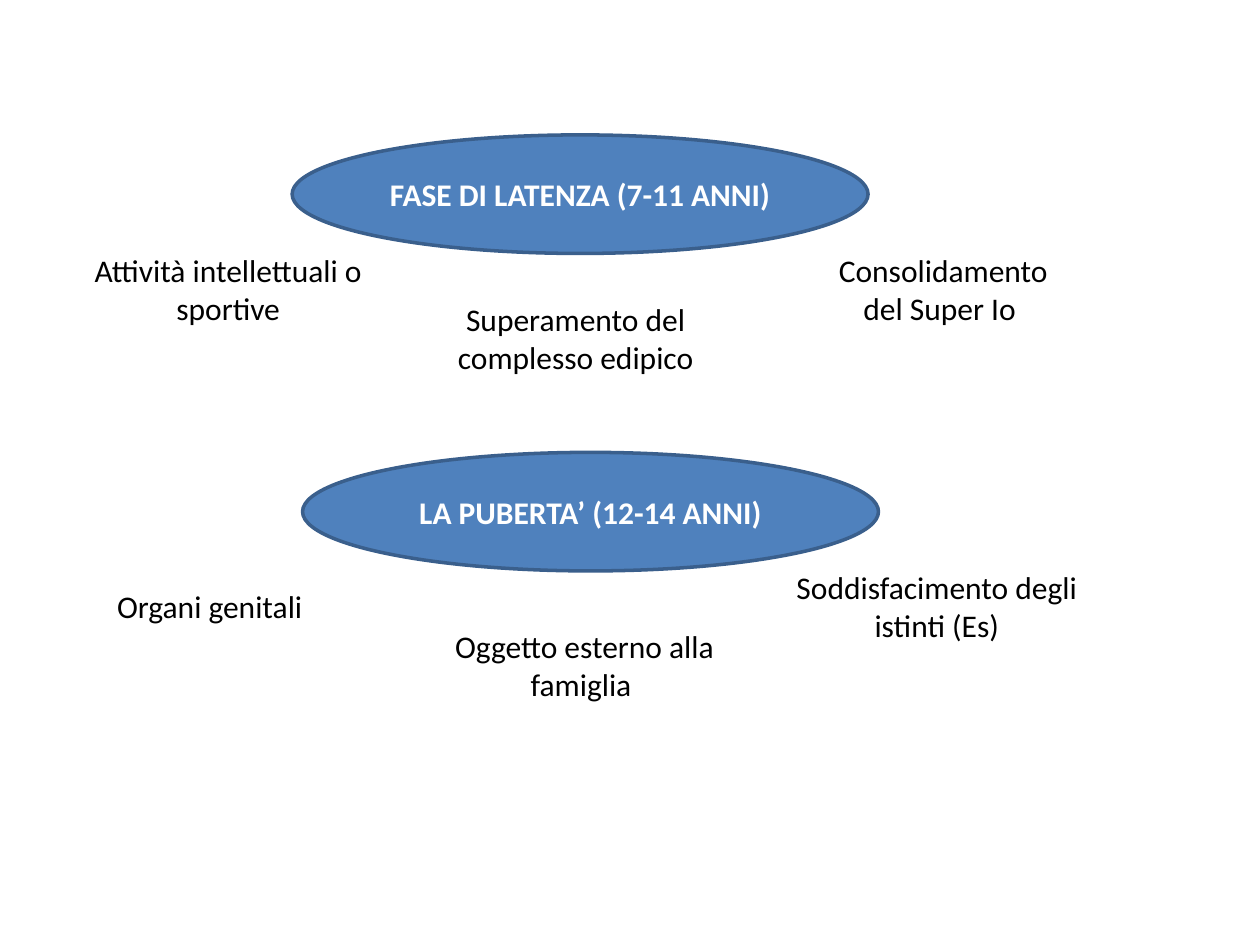
import pptx
import pptx.dml.color
import pptx.enum.shapes
import pptx.enum.text
import pptx.util

Cm = pptx.util.Cm
COLORS = {"fill": "4F81BD", "line": "3A5F8C", "light": "FFFFFF", "dark": "000000"}
ALIGN = pptx.enum.text.PP_ALIGN

# Each phase: title, ellipse position, then its notes (text, left, top, width, height, alignment)
PHASES = [
    ("FASE DI LATENZA (7-11 ANNI)", 5.89, 2.72, [
        ("Attività intellettuali o sportive", 1.5, 4.93, 6.2, 1.8, ALIGN.CENTER),
        ("Superamento del complesso edipico", 8.71, 5.92, 5.79, 1.8, ALIGN.CENTER),
        ("Consolidamento del Super Io ", 16.31, 4.93, 5.41, 1.8, ALIGN.CENTER),
    ]),
    ("LA PUBERTA’ (12-14 ANNI)", 6.1, 9.12, [
        ("Organi genitali", 2.11, 11.71, 4.6, 1.02, ALIGN.LEFT),
        ("Oggetto esterno alla famiglia ", 8.89, 12.52, 5.79, 1.8, ALIGN.CENTER),
        ("Soddisfacimento degli istinti (Es)", 15.29, 11.33, 7.19, 1.8, ALIGN.CENTER),
    ]),
]


def rgb(name):
    return pptx.dml.color.RGBColor.from_string(COLORS[name])


class PhaseSlide:
    font_name = "Calibri"
    font_size = pptx.util.Pt(18)
    ellipse_size = Cm(11.61), Cm(2.39)

    def __init__(self, s):
        self.s = s

    def set_text(self, tf, text, color, align, bold=False):
        tf.word_wrap = True
        tf.text = text
        p = tf.paragraphs[0]
        p.alignment = align
        font = p.runs[0].font
        font.name, font.size, font.bold = self.font_name, self.font_size, bold
        font.color.rgb = rgb(color)

    def ellipse(self, text, left, top):
        sp = self.s.shapes.add_shape(
            pptx.enum.shapes.MSO_SHAPE.OVAL, Cm(left), Cm(top), *self.ellipse_size)
        sp.shadow.inherit = False
        sp.fill.solid()
        sp.fill.fore_color.rgb = rgb("fill")
        sp.line.color.rgb = rgb("line")
        sp.line.width = pptx.util.Pt(2)
        sp.text_frame.vertical_anchor = pptx.enum.text.MSO_ANCHOR.MIDDLE
        self.set_text(sp.text_frame, text, "light", ALIGN.CENTER, bold=True)

    def note(self, text, left, top, width, height, align):
        sp = self.s.shapes.add_textbox(Cm(left), Cm(top), Cm(width), Cm(height))
        self.set_text(sp.text_frame, text, "dark", align)
        sp.text_frame.auto_size = pptx.enum.text.MSO_AUTO_SIZE.SHAPE_TO_FIT_TEXT


def main():
    prs = pptx.Presentation()
    prs.slide_width, prs.slide_height = Cm(25.4), Cm(19.05)
    slide = PhaseSlide(prs.slides.add_slide(prs.slide_layouts[6]))
    for title, left, top, notes in PHASES:
        slide.ellipse(title, left, top)
        for note in notes:
            slide.note(*note)
    prs.save("out.pptx")


if __name__ == "__main__":
    main()
